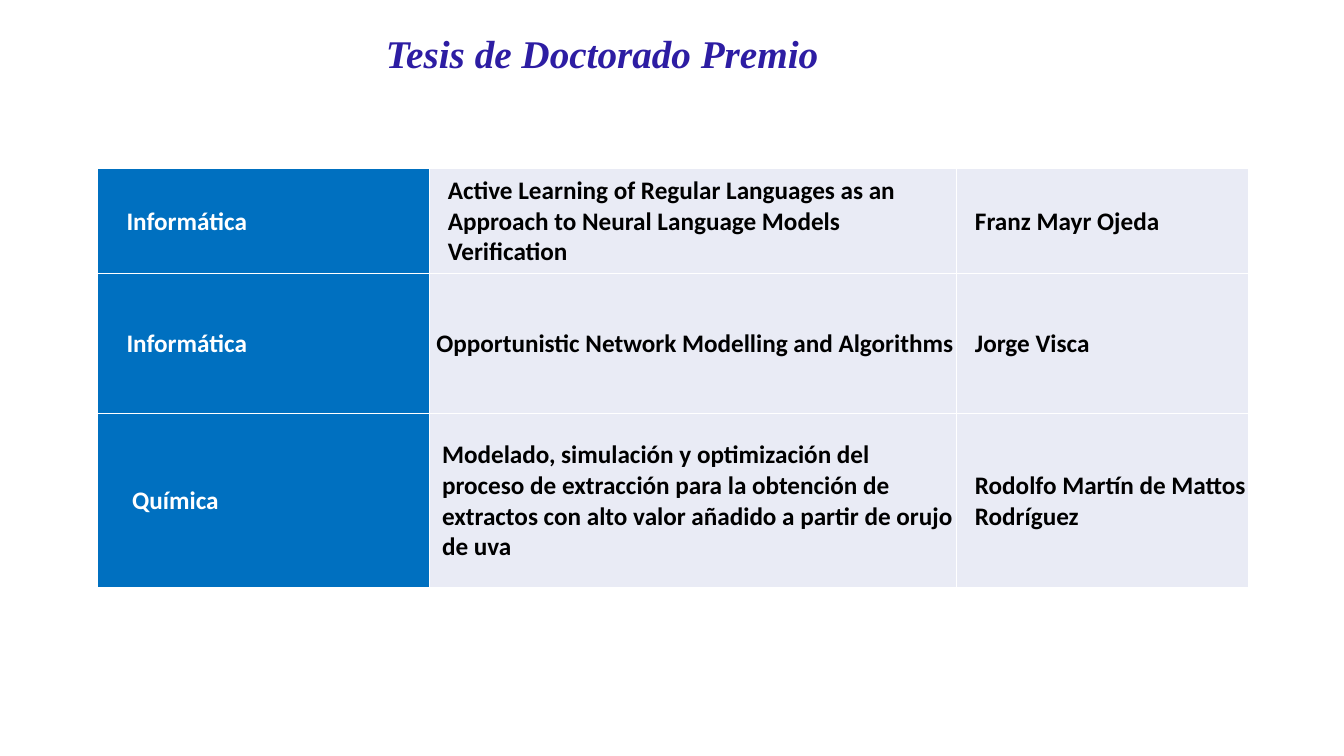
from lxml.etree import SubElement
from pptx import Presentation
from pptx.dml.color import RGBColor
from pptx.enum.text import MSO_ANCHOR as Anchor, MSO_AUTO_SIZE as AutoSize, PP_ALIGN as Align
from pptx.oxml.ns import qn
from pptx.util import Pt

WHITE = RGBColor(0xFF, 0xFF, 0xFF)
BLACK = RGBColor(0x00, 0x00, 0x00)
INDIGO = RGBColor(0x2D, 0x1D, 0xA3)
BLUE = RGBColor(0x00, 0x70, 0xC0)
PALE = RGBColor(0xE9, 0xEB, 0xF5)

COLUMN_WIDTHS = (237.6, 376.6, 208.1)
ROW_HEIGHTS = (74.9, 100.1, 124.5)
CELL_MARGIN = 0.72
INDENT_STEP = 4.07

THESES = (
    ((5, "Informática"),
     (3, "Active Learning of Regular Languages as an\n"
         "Approach to Neural Language Models\n"
         "Verification"),
     (3, "Franz Mayr Ojeda")),
    ((5, "Informática"),
     (1, "Opportunistic Network Modelling and Algorithms"),
     (3, "Jorge Visca")),
    ((6, "Química"),
     (2, "Modelado, simulación y optimización del\n"
         "proceso de extracción para la obtención de\n"
         "extractos con alto valor añadido a partir de orujo\n"
         "de uva"),
     (3, "Rodolfo Martín de Mattos\nRodríguez")),
)


def set_font(paragraph, name, size, color, italic=False):
    font = paragraph.font
    font.name = name
    font.size = Pt(size)
    font.bold = True
    font.italic = italic
    font.color.rgb = color


def place_title(slide, text):
    title = slide.shapes.title
    title.left, title.top = Pt(268.5), Pt(17.3)
    title.width, title.height = Pt(411), Pt(41)
    frame = title.text_frame
    frame.text = text
    frame.auto_size = AutoSize.NONE
    frame.vertical_anchor = Anchor.TOP
    paragraph = frame.paragraphs[0]
    paragraph.alignment = Align.LEFT
    set_font(paragraph, "Times New Roman", 28, INDIGO, italic=True)


def add_borders(cell):
    properties = cell._tc.get_or_add_tcPr()
    for side in ("a:lnL", "a:lnR", "a:lnT", "a:lnB"):
        line = SubElement(properties, qn(side), w=str(Pt(1)))
        fill = SubElement(line, qn("a:solidFill"))
        SubElement(fill, qn("a:srgbClr"), val=str(WHITE))


def fill_cell(cell, text, indent, text_color, fill_color):
    add_borders(cell)
    cell.fill.solid()
    cell.fill.fore_color.rgb = fill_color
    cell.vertical_anchor = Anchor.MIDDLE
    cell.margin_left = Pt(CELL_MARGIN + indent * INDENT_STEP)
    cell.margin_right = cell.margin_top = Pt(CELL_MARGIN)
    cell.margin_bottom = Pt(0)
    cell.text = text
    for paragraph in cell.text_frame.paragraphs:
        set_font(paragraph, "Calibri", 18, text_color)


def add_thesis_table(slide):
    frame = slide.shapes.add_table(
        len(ROW_HEIGHTS), len(COLUMN_WIDTHS), Pt(69.3), Pt(120.4),
        Pt(sum(COLUMN_WIDTHS)), Pt(sum(ROW_HEIGHTS)))
    table = frame.table
    for column, width in zip(table.columns, COLUMN_WIDTHS):
        column.width = Pt(width)
    for row, height, thesis in zip(table.rows, ROW_HEIGHTS, THESES):
        row.height = Pt(height)
        for index, (indent, text) in enumerate(thesis):
            colors = (WHITE, BLUE) if index == 0 else (BLACK, PALE)
            fill_cell(row.cells[index], text, indent, *colors)


def main():
    deck = Presentation()
    deck.slide_width, deck.slide_height = Pt(960), Pt(540)
    slide = deck.slides.add_slide(deck.slide_layouts[5])
    place_title(slide, "Tesis de Doctorado Premio")
    add_thesis_table(slide)
    deck.save("out.pptx")


if __name__ == "__main__":
    main()
